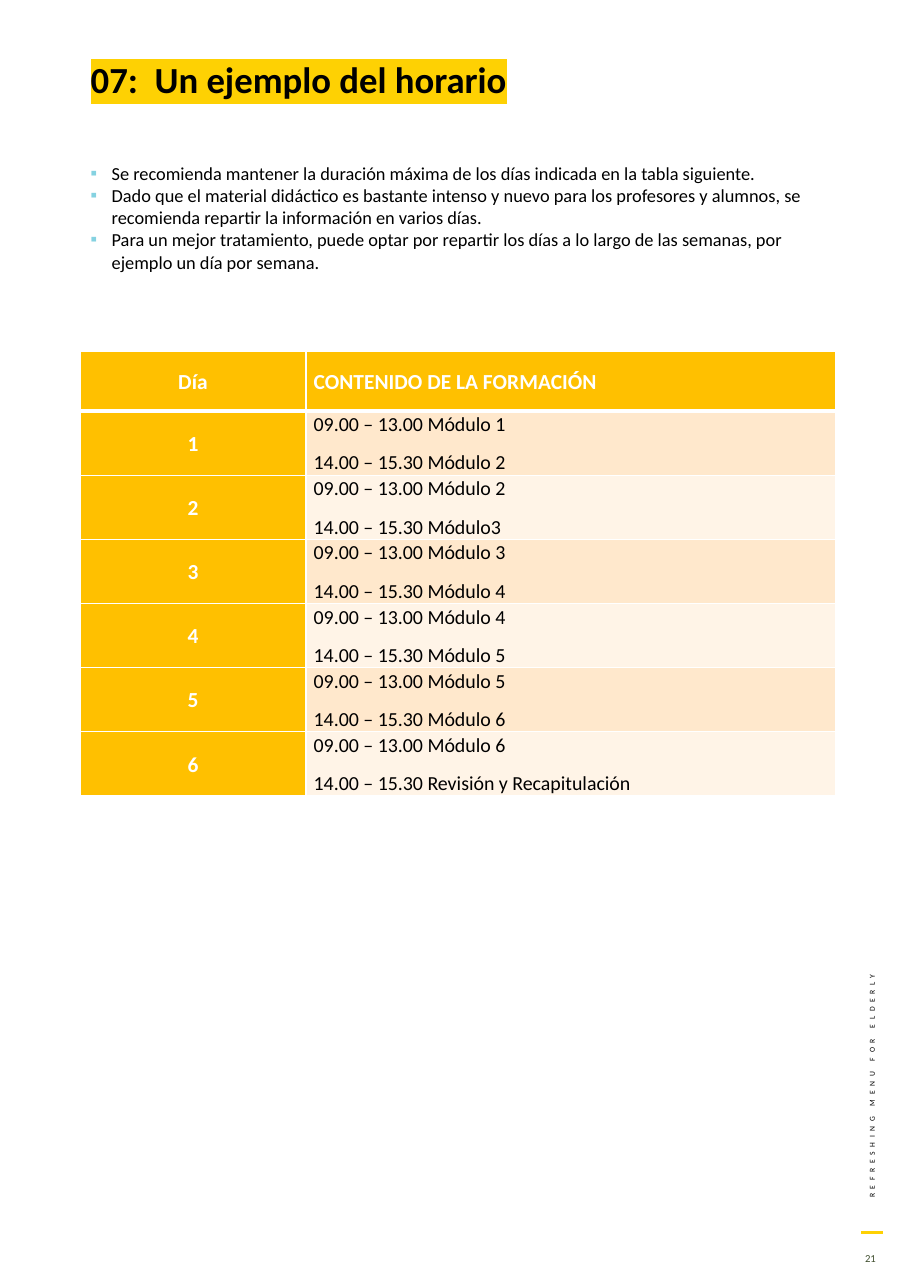
"""Build a training timetable page with notes, a day table and a side label."""
from dataclasses import dataclass, field
from typing import Any

import pptx
import pptx.dml.color
import pptx.enum.shapes
import pptx.enum.text
import pptx.oxml
import pptx.oxml.ns
import pptx.util

Pt = pptx.util.Pt
RGB = pptx.dml.color.RGBColor
Align = pptx.enum.text.PP_ALIGN
Anchor = pptx.enum.text.MSO_ANCHOR
Fit = pptx.enum.text.MSO_AUTO_SIZE

BLACK = RGB(0x00, 0x00, 0x00)
WHITE = RGB(0xFF, 0xFF, 0xFF)
OLIVE = RGB(0x40, 0x4F, 0x2F)
YELLOW = RGB(0xFE, 0xD1, 0x03)
AMBER = RGB(0xFF, 0xC0, 0x00)
PEACH = RGB(0xFF, 0xE8, 0xCC)
CREAM = RGB(0xFF, 0xF4, 0xE7)
AQUA = RGB(0x85, 0xD2, 0xE1)

LEFT, WIDE = 52.2, 494
HEAD = {"size": Pt(14), "bold": True}
BODY = {"size": Pt(13), "bold": False}
ROW = {"line_spacing": 1.07, "space_after": Pt(8)}


@dataclass
class Block:
    area: tuple[float, float, float, float]
    lines: list[str]
    font: dict[str, Any]
    color: RGB = BLACK
    para: dict[str, Any] = field(default_factory=dict)
    frame: dict[str, Any] = field(default_factory=dict)
    turn: float = 0
    mark: RGB | None = None
    bullet: RGB | None = None
    track: int = 0


BLOCKS = [
    Block((555.84, 811.44, 23.76, 20.88), ["21"], {"size": Pt(7)}, OLIVE,
          para={"alignment": Align.RIGHT}, frame={"vertical_anchor": Anchor.MIDDLE}),
    Block((445.2, 658.08, 249.84, 13.68), ["REFRESHING MENU FOR ELDERLY"],
          {"size": Pt(5)}, frame={"auto_size": Fit.SHAPE_TO_FIT_TEXT}, turn=270, track=300),
    Block((LEFT, 37.1, 426.96, 41.76), ["07:  Un ejemplo del horario"],
          {"size": Pt(24), "bold": True},
          para={"line_spacing": 0.9, "space_before": Pt(8.3)}, mark=YELLOW),
    Block((LEFT, 102.24, WIDE, 79.92), [
        "Se recomienda mantener la duración máxima de los días indicada en la tabla siguiente.",
        "Dado que el material didáctico es bastante intenso y nuevo para los profesores y "
        "alumnos, se recomienda repartir la información en varios días.",
        "Para un mejor tratamiento, puede optar por repartir los días a lo largo de las "
        "semanas, por ejemplo un día por semana.",
    ], {"size": Pt(12)}, bullet=AQUA,
        frame={"vertical_anchor": Anchor.MIDDLE, "auto_size": Fit.SHAPE_TO_FIT_TEXT}),
]

DAYS = [
    ("Módulo 1", "Módulo 2"),
    ("Módulo 2", "Módulo3"),
    ("Módulo 3", "Módulo 4"),
    ("Módulo 4", "Módulo 5"),
    ("Módulo 5", "Módulo 6"),
    ("Módulo 6", "Revisión y Recapitulación"),
]


def style(item: Any, look: dict[str, Any]) -> None:
    for name, value in look.items():
        setattr(item, name, value)


def node(body: str) -> Any:
    tag, rest = body.split(" ", 1)
    return pptx.oxml.parse_xml(f"<a:{tag} {pptx.oxml.ns.nsdecls('a')} {rest}")


def tint(color: RGB) -> str:
    return f'<a:srgbClr val="{color}"/>'


def write(frame: Any, lines: list[str], font: dict[str, Any], color: RGB,
          para: dict[str, Any]) -> None:
    for index, line in enumerate(lines):
        part = frame.add_paragraph() if index else frame.paragraphs[0]
        style(part, para)
        run = part.add_run()
        run.text = line
        style(run.font, {"name": "Calibri", **font})
        run.font.color.rgb = color


def add_block(slide: Any, block: Block) -> None:
    box = slide.shapes.add_textbox(*map(Pt, block.area))
    box.rotation = block.turn
    frame = box.text_frame
    style(frame, {"word_wrap": True, **block.frame})
    write(frame, block.lines, block.font, block.color, block.para)
    for part in frame.paragraphs:
        props = part.runs[0].font._element
        if block.track:
            props.set("spc", str(block.track))
        if block.mark:
            fill = props.find(pptx.oxml.ns.qn("a:solidFill"))
            fill.addnext(node(f"highlight >{tint(block.mark)}</a:highlight>"))
        if block.bullet:
            props = part._p.get_or_add_pPr()
            props.set("marL", str(Pt(13.68)))
            props.set("indent", str(-Pt(13.68)))
            props.append(node(f"buClr >{tint(block.bullet)}</a:buClr>"))
            props.append(node('buFont typeface="Calibri"/>'))
            props.append(node('buChar char="▪"/>'))


def fill_cell(cell: Any, row: int, lines: list[str], title: bool, center: bool) -> None:
    style(cell, {"margin_left": Pt(5.04), "margin_right": Pt(5.04),
                 "margin_top": 0, "margin_bottom": 0,
                 "vertical_anchor": Anchor.MIDDLE if title else Anchor.TOP})
    props = cell._tc.get_or_add_tcPr()
    for side in "LRTB":
        thick = (row, side) in {(0, "B"), (1, "T")}
        props.append(node(f'ln{side} w="{Pt(3 if thick else 1)}">'
                          f"<a:solidFill>{tint(WHITE)}</a:solidFill></a:ln{side}>"))
    cell.fill.solid()
    cell.fill.fore_color.rgb = AMBER if title else PEACH if row % 2 else CREAM
    align = Align.CENTER if center else Align.LEFT
    write(cell.text_frame, lines, HEAD if title else BODY,
          WHITE if title else BLACK, {"alignment": align, **ROW})


def add_plan(slide: Any) -> None:
    rows = [("Día", ["CONTENIDO DE LA FORMACIÓN"])]
    for day, (early, late) in enumerate(DAYS, 1):
        rows.append((str(day), [f"09.00 – 13.00 {early}", f"14.00 – 15.30 {late}"]))
    area = map(Pt, (LEFT, 229.68, WIDE, 290.4))
    table = slide.shapes.add_table(len(rows), 2, *area).table
    style(table, {"first_row": False, "horz_banding": False})
    for column, width in zip(table.columns, (147.8, 346.2)):
        column.width = Pt(width)
    for index, (day, lines) in enumerate(rows):
        table.rows[index].height = Pt(41.9 if index else 39)
        fill_cell(table.cell(index, 0), index, [day], True, True)
        fill_cell(table.cell(index, 1), index, lines, index == 0, False)


def add_dash(slide: Any) -> None:
    ends = map(Pt, (577, 805.4, 562.6, 805.4))
    dash = slide.shapes.add_connector(pptx.enum.shapes.MSO_CONNECTOR.STRAIGHT, *ends)
    dash.line.color.rgb = YELLOW
    dash.line.width = Pt(2.25)
    dash._element.spPr.append(node("effectLst />"))


def main() -> None:
    deck = pptx.Presentation()
    style(deck, {"slide_width": Pt(595.44), "slide_height": Pt(841.68)})
    slide = deck.slides.add_slide(deck.slide_layouts[6])
    add_dash(slide)
    for block in BLOCKS:
        add_block(slide, block)
    add_plan(slide)
    deck.save("out.pptx")


if __name__ == "__main__":
    main()
